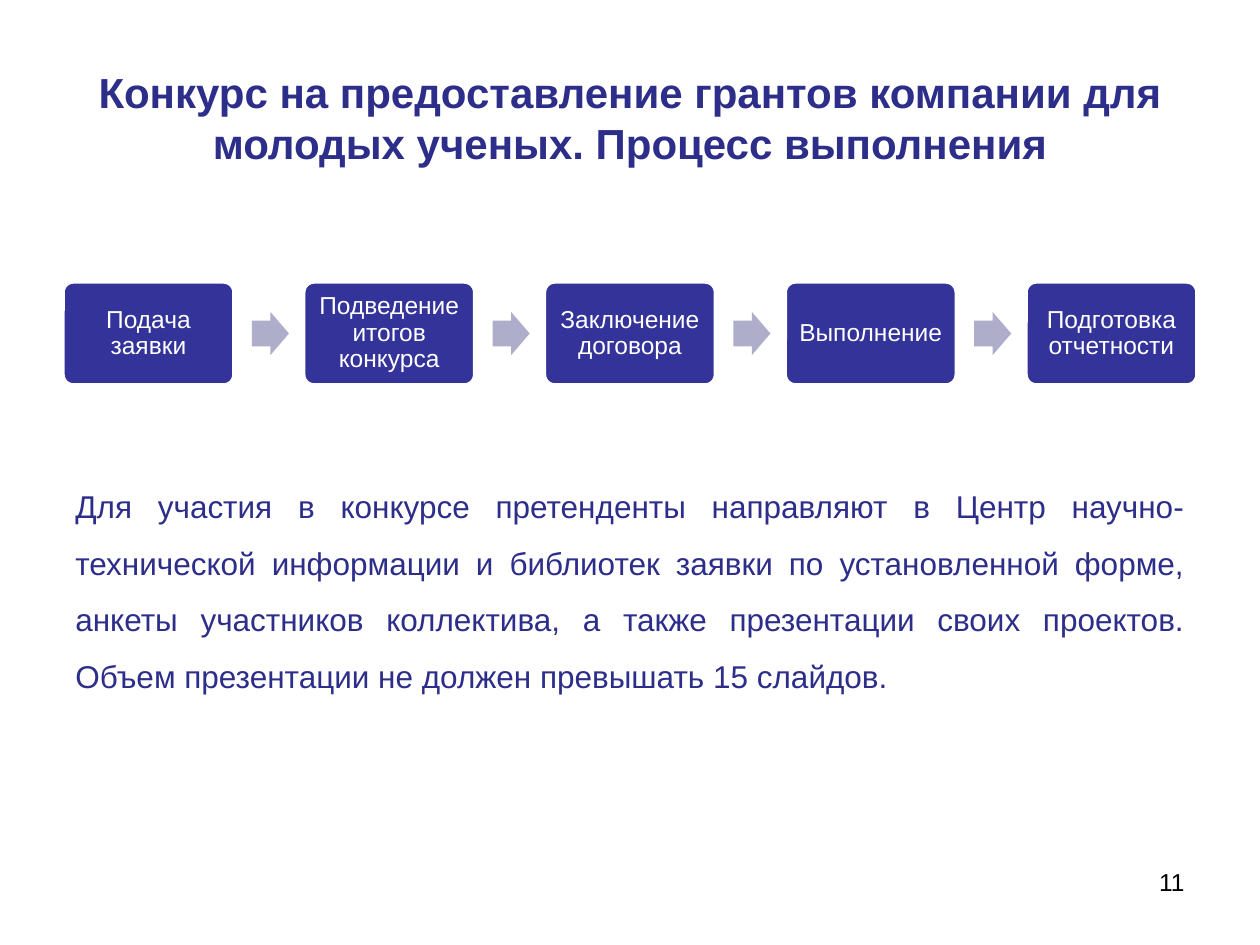
from dataclasses import dataclass

from pptx import Presentation
from pptx.dml.color import RGBColor as Rgb
from pptx.enum.shapes import MSO_SHAPE as Kind
from pptx.enum.text import MSO_ANCHOR as Anchor, PP_ALIGN as Align
from pptx.util import Emu, Pt


@dataclass(frozen=True)
class Theme:
    """Hold the colours and type sizes of the slide."""
    face: str = "Arial"
    ink: str = "2D2D8A"
    step: str = "333399"
    arrow: str = "AEAECA"
    white: str = "FFFFFF"
    black: str = "000000"
    head: int = 24
    body: int = 18
    small: int = 14


THEME = Theme()
TITLE = "Конкурс на предоставление грантов компании для молодых ученых. Процесс выполнения"
STEPS = ["Подача заявки", "Подведение итогов конкурса", "Заключение договора",
         "Выполнение", "Подготовка отчетности"]
BODY = ("Для участия в конкурсе претенденты направляют в Центр научно-технической "
        "информации и библиотек заявки по установленной форме, анкеты участников "
        "коллектива, а также презентации своих проектов. Объем презентации не должен "
        "превышать 15 слайдов.")


def px(n):
    """Turn pixels into EMU."""
    return Emu(round(n * 914400 / 126))


def write(shape, text, size, color, align, anchor=Anchor.TOP, bold=False, lead=1.0):
    """Set one styled paragraph in a shape."""
    frame = shape.text_frame
    frame.word_wrap = True
    frame.vertical_anchor = anchor
    para = frame.paragraphs[0]
    para.text = text
    para.alignment = align
    para.line_spacing = lead
    font = para.font
    font.name, font.size, font.bold = THEME.face, Pt(size), bold
    font.color.rgb = Rgb.from_string(color)


def label(slide, box, text, size, color, align, **style):
    """Place a text box."""
    shape = slide.shapes.add_textbox(*map(px, box))
    write(shape, text, size, color, align, **style)


def draw(slide, kind, box, fill, *adjs):
    """Place a plain filled shape without an outline."""
    shape = slide.shapes.add_shape(kind, *map(px, box))
    shape.shadow.inherit = False
    shape.fill.solid()
    shape.fill.fore_color.rgb = Rgb.from_string(fill)
    shape.line.fill.background()
    for i, value in enumerate(adjs):
        shape.adjustments[i] = value
    return shape


def step(slide, box, text):
    """Draw one labelled step of the process."""
    shape = draw(slide, Kind.ROUNDED_RECTANGLE, box, THEME.step, 0.1)
    shape.line.color.rgb = Rgb.from_string(THEME.white)
    shape.line.width = Pt(2)
    frame = shape.text_frame
    frame.margin_left = frame.margin_right = px(8)
    frame.margin_top = frame.margin_bottom = px(8)
    write(shape, text, THEME.small, THEME.white, Align.CENTER, Anchor.MIDDLE, lead=0.9)


def flow(slide, box, names):
    """Spread the steps evenly over a row, with arrows between them."""
    left, top, width, height = box
    wide, long, tall = 171, 37, 43
    pitch = (width - wide) / (len(names) - 1)
    for i, name in enumerate(names):
        x = left + i * pitch
        step(slide, (x, top, wide, height), name)
        if i < len(names) - 1:
            spot = (x + wide + 18, top + (height - tall) / 2, long, tall)
            draw(slide, Kind.RIGHT_ARROW, spot, THEME.arrow, 0.6, 0.5)


def main():
    """Build and save the slide."""
    deck = Presentation()
    deck.slide_width, deck.slide_height = px(1260), px(945)
    slide = deck.slides.add_slide(deck.slide_layouts[6])
    label(slide, (63, 38, 1134, 158), TITLE, THEME.head, THEME.ink,
          Align.CENTER, anchor=Anchor.MIDDLE, bold=True)
    flow(slide, (63, 282, 1134, 103), STEPS)
    label(slide, (63, 462, 1134, 234), BODY, THEME.body, THEME.ink,
          Align.JUSTIFY, lead=1.5)
    label(slide, (903, 861, 294, 66), "11", THEME.small, THEME.black, Align.RIGHT)
    deck.save("out.pptx")


if __name__ == "__main__":
    main()
